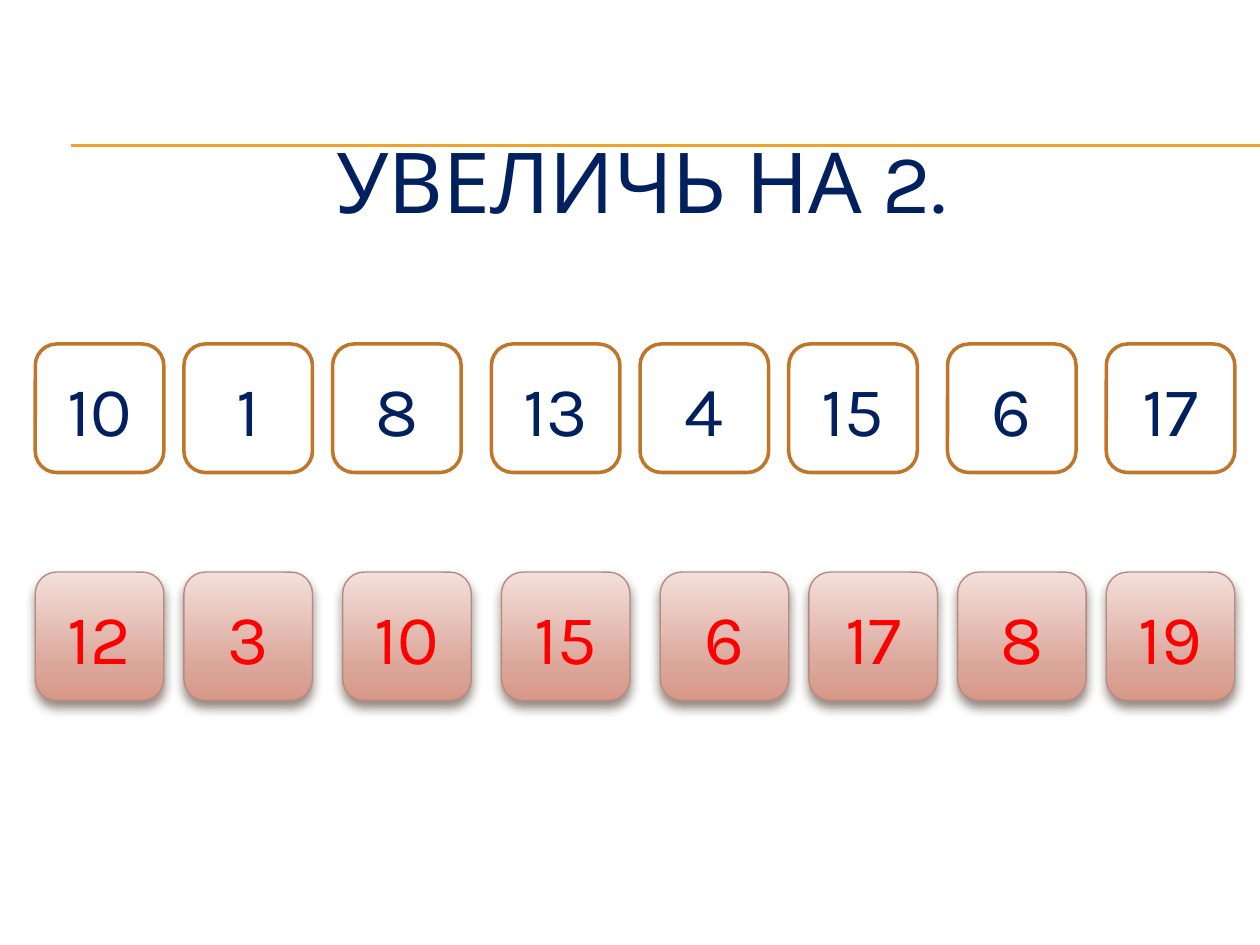
from copy import deepcopy
from itertools import accumulate

from lxml import etree
from pptx import Presentation
from pptx.dml.color import RGBColor
from pptx.enum import shapes, text
from pptx.oxml import parse_xml
from pptx.oxml.ns import nsdecls, qn
from pptx.util import Inches, Pt

NAVY = RGBColor(0x00, 0x20, 0x60)
RED = RGBColor(0xFF, 0x00, 0x00)
WHITE = RGBColor(0xFF, 0xFF, 0xFF)
GOLD = RGBColor(0xF0, 0xA2, 0x2E)
BROWN = RGBColor(0xC1, 0x75, 0x29)
ROSE_EDGE = RGBColor(0xB5, 0x8B, 0x80)
SHADOW = RGBColor(0x4E, 0x3B, 0x30)
ROSE_STOPS = [
    (0, RGBColor(0xF3, 0xE0, 0xDB)),
    (0.72, RGBColor(0xDC, 0xA7, 0x9B)),
    (1, RGBColor(0xD8, 0x97, 0x87)),
]
FONT = "Karla"
CARD = 1.02
NARROW, WIDE = 1.18, 1.26
NUMBERS = [10, 1, 8, 13, 4, 15, 6, 17]
NUMBER_STEPS = [NARROW, NARROW, WIDE, NARROW, NARROW, WIDE, WIDE]
ANSWER_STEPS = [NARROW, WIDE, WIDE, WIDE, NARROW, NARROW, NARROW]


def write_text(sp, words, size, color):
    """Write one centred line in the middle of a shape."""
    tf = sp.text_frame
    tf.word_wrap = True
    tf.vertical_anchor = text.MSO_ANCHOR.MIDDLE
    p = tf.paragraphs[0]
    p.alignment = text.PP_ALIGN.CENTER
    r = p.add_run()
    r.text = words
    for name, value in {"name": FONT, "size": Pt(size)}.items():
        setattr(r.font, name, value)
    r.font.color.rgb = color


def add_rules(s, left, top, width):
    """Draw the double gold rule above the title."""
    for y in (top, top + 0.01):
        line = s.shapes.add_connector(
            shapes.MSO_CONNECTOR.STRAIGHT,
            Inches(left), Inches(y), Inches(left + width), Inches(y))
        line.line.color.rgb = GOLD
        line.line.width = Pt(0.75)
        etree.SubElement(line._element.spPr, qn("a:effectLst"))


def add_title(s, left, top, width, height):
    """Place the slide title."""
    sp = s.shapes.add_textbox(Inches(left), Inches(top), Inches(width), Inches(height))
    write_text(sp, "УВЕЛИЧЬ НА 2.", 48, NAVY)


def style_number(sp):
    """Give a card a white face and a brown outline."""
    sp.fill.solid()
    sp.fill.fore_color.rgb = WHITE
    sp.line.color.rgb = BROWN
    sp.line.width = Pt(2)


def style_answer(sp):
    """Give a card a rose gradient and a soft shadow below."""
    sp.fill.gradient()
    sp.fill.gradient_angle = 270
    stop_list = sp._element.spPr.find(".//" + qn("a:gsLst"))
    stop_list.append(deepcopy(stop_list[0]))
    for stop, (position, color) in zip(sp.fill.gradient_stops, ROSE_STOPS):
        stop.position = position
        stop.color.rgb = color
    sp.line.color.rgb = ROSE_EDGE
    sp.line.width = Pt(0.79)
    sp._element.spPr.find(qn("a:effectLst")).append(parse_xml(
        f'<a:outerShdw {nsdecls("a")} blurRad="{Pt(6)}" dist="{Pt(4)}" dir="5400000" '
        f'rotWithShape="0"><a:srgbClr val="{SHADOW}"><a:alpha val="60000"/>'
        '</a:srgbClr></a:outerShdw>'))


def add_cards(s, left, top, values, steps, style, color):
    """Lay out a row of rounded number cards."""
    for x, value in zip(accumulate(steps, initial=left), values):
        sp = s.shapes.add_shape(
            shapes.MSO_SHAPE.ROUNDED_RECTANGLE,
            Inches(x), Inches(top), Inches(CARD), Inches(CARD))
        sp.shadow.inherit = False
        style(sp)
        write_text(sp, str(value), 40, color)


def main():
    """Build and save the slide."""
    prs = Presentation()
    prs.slide_width, prs.slide_height = Inches(10), Inches(7.5)
    s = prs.slides.add_slide(prs.slide_layouts[6])
    add_rules(s, 0.56, 1.15, 9.44)
    add_title(s, 0.35, 0.52, 9.48, 1.81)
    add_cards(s, 0.28, 2.73, NUMBERS, NUMBER_STEPS, style_number, NAVY)
    answers = [n + 2 for n in NUMBERS]
    add_cards(s, 0.28, 4.54, answers, ANSWER_STEPS, style_answer, RED)
    prs.save("out.pptx")


if __name__ == "__main__":
    main()
